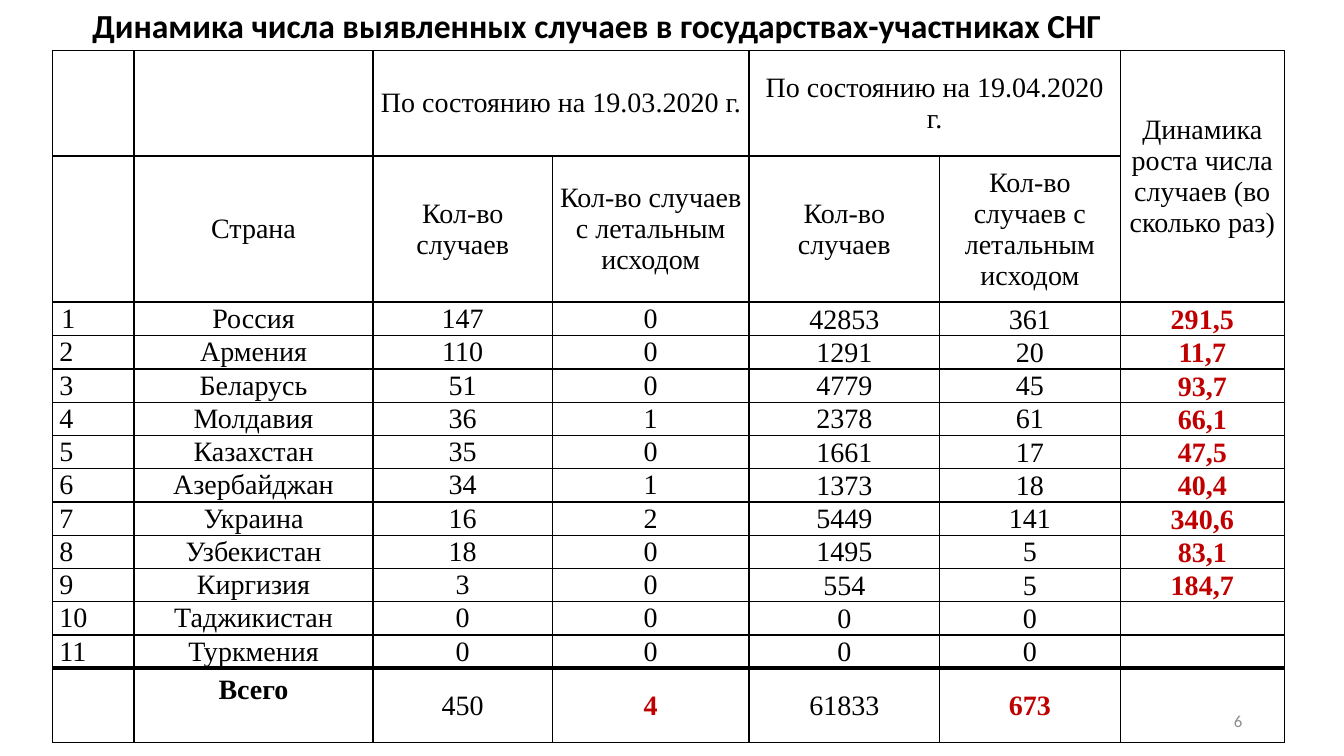
import dataclasses

import pptx
import pptx.dml.color
import pptx.enum.text
import pptx.oxml.ns
import pptx.util
from lxml import etree

ALIGN = pptx.enum.text.PP_ALIGN
ANCHOR = pptx.enum.text.MSO_ANCHOR
Inches = pptx.util.Inches
SLIDE_WIDTH, SLIDE_HEIGHT = Inches(13.33), Inches(7.5)


@dataclasses.dataclass(frozen=True)
class Theme:
    black: str = "000000"
    accent: str = "C00000"
    grey: str = "8C8C8C"
    heading_font: str = "Calibri"
    table_font: str = "Times New Roman"
    title_size: int = 24
    table_size: int = 20
    number_size: int = 12


THEME = Theme()

# Shares of the slide's width and height, in percent
TABLE_LEFT, TABLE_TOP = 3.9, 6.67
COLUMN_SHARES = [6.08, 17.78, 13.35, 14.63, 14.18, 13.43, 12.23]
HEADER_SHARES = [14, 19.33]
COUNTRY_SHARE, TOTAL_SHARE = 4.4, 9.87

HEADERS = [
    ["", "", "По состоянию на 19.03.2020 г.", "",
     "По состоянию на 19.04.2020 г.", "",
     "Динамика роста числа случаев (во сколько раз)"],
    ["", "Страна"] + ["Кол-во случаев", "Кол-во случаев с летальным исходом"] * 2 + [""],
]
COUNTRIES = [
    ("Россия", 147, 0, 42853, 361, "291,5"),
    ("Армения", 110, 0, 1291, 20, "11,7"),
    ("Беларусь", 51, 0, 4779, 45, "93,7"),
    ("Молдавия", 36, 1, 2378, 61, "66,1"),
    ("Казахстан", 35, 0, 1661, 17, "47,5"),
    ("Азербайджан", 34, 1, 1373, 18, "40,4"),
    ("Украина", 16, 2, 5449, 141, "340,6"),
    ("Узбекистан", 18, 0, 1495, 5, "83,1"),
    ("Киргизия", 3, 0, 554, 5, "184,7"),
    ("Таджикистан", 0, 0, 0, 0, ""),
    ("Туркмения", 0, 0, 0, 0, ""),
]
TOTALS = ["", "Всего", 450, 4, 61833, 673, ""]
MERGES = [((0, 2), (0, 3)), ((0, 4), (0, 5)), ((0, 6), (1, 6))]

FIRST_COUNTRY = len(HEADERS)
TOTAL_ROW = FIRST_COUNTRY + len(COUNTRIES)
# Weights of the horizontal rules that differ from 1 pt, by the row below them
RULE_WEIGHTS = {1: 1.5, FIRST_COUNTRY: 1.5, TOTAL_ROW: 3}


def across(percent):
    return int(SLIDE_WIDTH * percent / 100)


def down(percent):
    return int(SLIDE_HEIGHT * percent / 100)


def apply(target, values):
    for name, value in values.items():
        setattr(target, name, value)


def write(paragraph, text, align, color, **font):
    paragraph.alignment = align
    run = paragraph.add_run()
    run.text = str(text)
    apply(run.font, {"size": pptx.util.Pt(THEME.table_size),
                     "name": THEME.table_font, "bold": False, **font})
    run.font.color.rgb = pptx.dml.color.RGBColor.from_string(color)


def indent(paragraph, left, first_line):
    properties = paragraph._p.get_or_add_pPr()
    properties.set("marL", str(Inches(left)))
    properties.set("indent", str(Inches(first_line)))


def add_borders(cell, row):
    weights = {"lnL": 1, "lnR": 1,
               "lnT": RULE_WEIGHTS.get(row, 1), "lnB": RULE_WEIGHTS.get(row + 1, 1)}
    properties = cell._tc.get_or_add_tcPr()
    qn = pptx.oxml.ns.qn
    for side, weight in weights.items():
        line = etree.SubElement(properties, qn(f"a:{side}"), w=str(pptx.util.Pt(weight)))
        fill = etree.SubElement(line, qn("a:solidFill"))
        etree.SubElement(fill, qn("a:srgbClr"), val=THEME.black)


def fill_cell(cell, row, column, text):
    is_country = FIRST_COUNTRY <= row < TOTAL_ROW
    is_growth = is_country and column == 6
    is_highlight = is_growth or (row == TOTAL_ROW and column in (3, 5))
    is_total_label = row == TOTAL_ROW and column == 1
    tight = is_country and column >= 4
    side = Inches(0.01 if tight else 0.07)
    apply(cell, {
        "margin_left": side,
        "margin_right": side,
        "margin_top": Inches(0.01 if tight else 0),
        "margin_bottom": Inches(0.3 if is_total_label else 0),
        "vertical_anchor": ANCHOR.BOTTOM if is_growth else ANCHOR.MIDDLE,
    })
    add_borders(cell, row)
    cell.fill.background()
    if text == "":
        return
    paragraph = cell.text_frame.paragraphs[0]
    write(paragraph, text, ALIGN.CENTER if column else ALIGN.LEFT,
          THEME.accent if is_highlight else THEME.black,
          bold=is_highlight or is_total_label)
    if column == 0:
        indent(paragraph, *((0, 0.02) if row == FIRST_COUNTRY else (0.5, -0.5)))


def add_cases_table(slide):
    numbered = [(number, *country) for number, country in enumerate(COUNTRIES, 1)]
    content = [*HEADERS, *numbered, TOTALS]
    row_shares = [*HEADER_SHARES, *[COUNTRY_SHARE] * len(COUNTRIES), TOTAL_SHARE]
    cases = slide.shapes.add_table(
        len(content), len(COLUMN_SHARES), across(TABLE_LEFT), down(TABLE_TOP),
        across(sum(COLUMN_SHARES)), down(sum(row_shares))).table
    apply(cases, {"first_row": False, "horz_banding": False})
    for column, share in zip(cases.columns, COLUMN_SHARES):
        column.width = across(share)
    for row, share in zip(cases.rows, row_shares):
        row.height = down(share)
    for row, texts in enumerate(content):
        for column, text in enumerate(texts):
            fill_cell(cases.cell(row, column), row, column, text)
    for first, last in MERGES:
        cases.cell(*first).merge(cases.cell(*last))


def add_label(slide, left, top, width, height, text, align, color, frame, **font):
    label = slide.shapes.add_textbox(across(left), down(top), across(width), down(height))
    apply(label.text_frame, {"word_wrap": True, **frame})
    write(label.text_frame.paragraphs[0], text, align, color,
          name=THEME.heading_font, **font)


def main():
    presentation = pptx.Presentation()
    apply(presentation, {"slide_width": SLIDE_WIDTH, "slide_height": SLIDE_HEIGHT})
    slide = presentation.slides.add_slide(presentation.slide_layouts[6])
    add_cases_table(slide)
    add_label(slide, TABLE_LEFT, 0, 81.02, TABLE_TOP,
              "Динамика числа выявленных случаев в государствах-участниках СНГ",
              ALIGN.CENTER, THEME.black,
              {"auto_size": pptx.enum.text.MSO_AUTO_SIZE.SHAPE_TO_FIT_TEXT},
              size=pptx.util.Pt(THEME.title_size), bold=True)
    add_label(slide, 70.67, 92.67, 22.5, 5.33, "6", ALIGN.RIGHT, THEME.grey,
              {"vertical_anchor": ANCHOR.MIDDLE},
              size=pptx.util.Pt(THEME.number_size))
    presentation.save("out.pptx")


if __name__ == "__main__":
    main()
